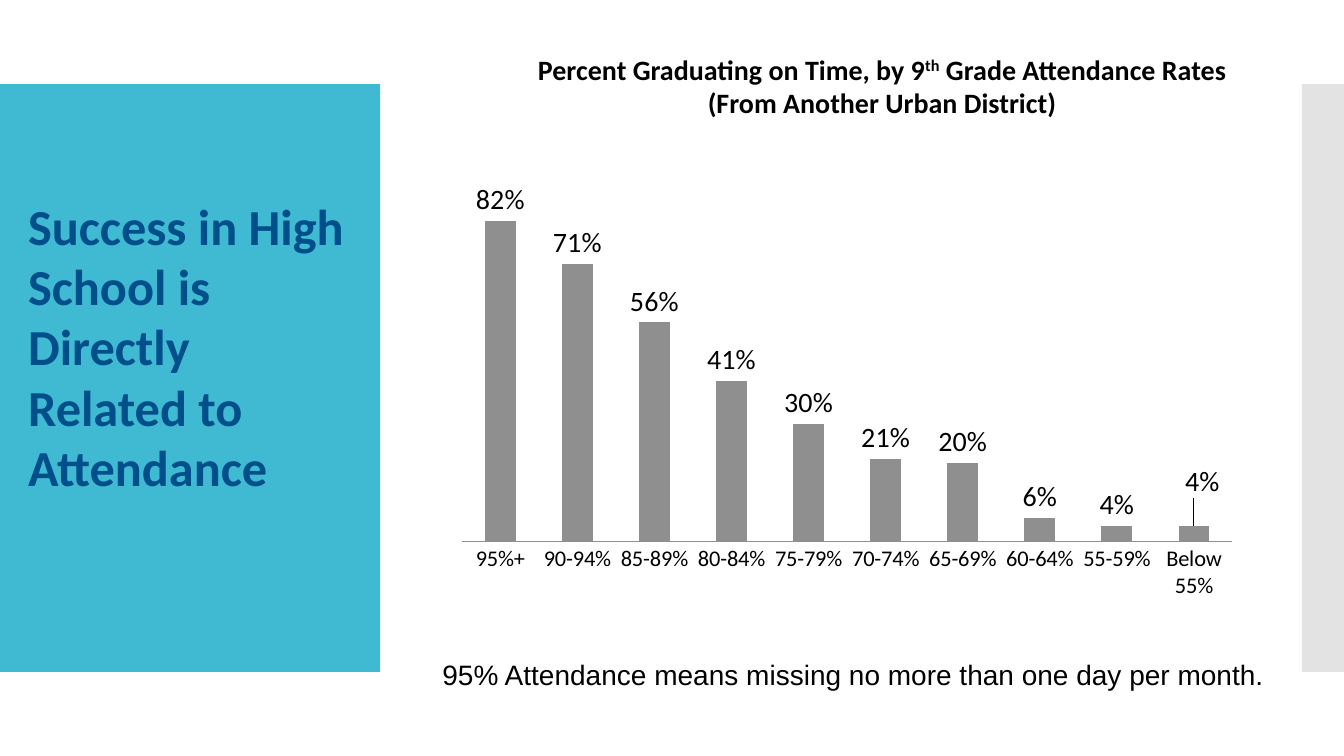
from dataclasses import dataclass

from lxml.etree import SubElement
from pptx import Presentation
from pptx.chart.data import CategoryChartData
from pptx.dml.color import RGBColor
from pptx.enum.chart import XL_CHART_TYPE, XL_LABEL_POSITION, XL_TICK_MARK
from pptx.enum.shapes import MSO_SHAPE
from pptx.enum.text import PP_ALIGN
from pptx.oxml import parse_xml
from pptx.oxml.ns import nsdecls, qn
from pptx.util import Cm, Pt


@dataclass(frozen=True)
class Theme:
    """Colours, fonts and type sizes of the slide."""
    panel: RGBColor = RGBColor(0x40, 0xBA, 0xD2)
    edge: RGBColor = RGBColor(0xC8, 0xC8, 0xC8)
    headline: RGBColor = RGBColor(0x00, 0x4F, 0x8A)
    ink: RGBColor = RGBColor(0, 0, 0)
    bars: RGBColor = RGBColor(0x8F, 0x8F, 0x8F)
    face: str = "Calibri"
    note_face: str = "Arial"
    headline_size: int = 36
    body_size: int = 20
    axis_size: int = 16


def manual_layout(x, y, **extras):
    """Return a chart layout element with the given fractions."""
    values = {**extras, "x": x, "y": y}
    order = ("layoutTarget", "xMode", "yMode", "x", "y", "w", "h")
    settings = "".join(f'<c:{key} val="{values[key]}"/>' for key in order if key in values)
    return parse_xml(f'<c:layout {nsdecls("c")}><c:manualLayout>{settings}</c:manualLayout></c:layout>')


class SlideBuilder:
    """Adds styled elements to the current slide."""

    def __init__(self, slide, theme):
        self.slide = slide
        self.theme = theme

    def style(self, font, size, color=None, face=None, bold=False):
        """Apply type settings to a font."""
        font.name = face or self.theme.face
        font.size = Pt(size)
        font.bold = bold
        font.color.rgb = color or self.theme.ink

    def band(self, left, width, color, opacity=100):
        """Add a side band at the common height."""
        band = self.slide.shapes.add_shape(
            MSO_SHAPE.RECTANGLE, Cm(left), Cm(2.12), Cm(width), Cm(14.81))
        band.shadow.inherit = False
        band.line.fill.background()
        band.fill.solid()
        band.fill.fore_color.rgb = color
        if opacity < 100:
            tint = band.fill._xPr.find(f".//{qn('a:srgbClr')}")
            SubElement(tint, qn("a:alpha"), val=str(opacity * 1000))

    def text(self, box, lines, size, align=PP_ALIGN.LEFT, **look):
        """Add paragraphs, each a list of (text, baseline) runs."""
        frame = self.slide.shapes.add_textbox(*map(Cm, box)).text_frame
        frame.word_wrap = True
        for index, line in enumerate(lines):
            paragraph = frame.add_paragraph() if index else frame.paragraphs[0]
            paragraph.alignment = align
            self.style(paragraph.font, size, **look)
            for wording, baseline in line:
                run = paragraph.add_run()
                run.text = wording
                self.style(run.font, size, **look)
                if baseline:
                    run.font._element.set("baseline", str(baseline * 1000))

    def column_chart(self, box, rates):
        """Add the labelled column chart."""
        graduation = CategoryChartData(number_format="0%")
        graduation.categories = list(rates)
        graduation.add_series("Series 1", list(rates.values()))
        chart = self.slide.shapes.add_chart(
            XL_CHART_TYPE.COLUMN_CLUSTERED, *map(Cm, box), graduation).chart
        chart.has_legend = chart.has_title = False
        self.style(chart.font, self.theme.axis_size)

        bands = chart.category_axis
        bands.major_tick_mark = XL_TICK_MARK.NONE
        bands.format.line.color.rgb = self.theme.bars
        self.style(bands.tick_labels.font, self.theme.axis_size)
        scale = chart.value_axis
        scale.minimum_scale, scale.maximum_scale = 0, 0.9
        scale.has_major_gridlines = False
        scale.visible = False

        plot = chart.plots[0]
        plot.vary_by_categories = False
        plot.gap_width, plot.overlap = 150, -25
        columns = plot.series[0]
        columns.format.fill.solid()
        columns.format.fill.fore_color.rgb = self.theme.bars
        labels = columns.data_labels
        labels.show_value = True
        labels.number_format, labels.number_format_is_linked = "0%", False
        labels.position = XL_LABEL_POSITION.OUTSIDE_END
        self.style(labels.font, self.theme.body_size)

        last_label = columns.points[len(rates) - 1].data_label
        last_label.text_frame.text = f"{list(rates.values())[-1]:.0%}"
        wording = last_label.text_frame.paragraphs[0]
        self.style(wording.font, self.theme.body_size)
        self.style(wording.runs[0].font, self.theme.body_size)
        last_label.position = XL_LABEL_POSITION.OUTSIDE_END
        label_element = columns._element.find(f".//{qn('c:dLbl')}")
        label_element.insert(1, manual_layout(0.01, -0.05))

        area = chart._chartSpace.find(f".//{qn('c:plotArea')}")
        for default in area.findall(qn("c:layout")):
            area.remove(default)
        area.insert(0, manual_layout(
            0.076, 0.048, w=0.918, h=0.762,
            layoutTarget="inner", xMode="edge", yMode="edge"))


def main():
    """Build and save the attendance slide."""
    deck = Presentation()
    deck.slide_width, deck.slide_height = Cm(33.87), Cm(19.05)
    theme = Theme()
    page = SlideBuilder(deck.slides.add_slide(deck.slide_layouts[6]), theme)

    page.band(0, 9.58, theme.panel)
    page.band(32.81, 1.06, theme.edge, opacity=50)
    page.column_chart((10.03, 4.22, 21.16, 11.63), {
        "95%+": 0.82, "90-94%": 0.71, "85-89%": 0.56, "80-84%": 0.41,
        "75-79%": 0.3, "70-74%": 0.21, "65-69%": 0.2, "60-64%": 0.06,
        "55-59%": 0.04, "Below 55%": 0.04,
    })
    page.text((10.9, 16.44, 22.9, 1.1),
              [[("95% Attendance means missing no more than one day per month.", 0)]],
              theme.body_size, face=theme.note_face)
    page.text((0.46, 4.78, 8.59, 7.95),
              [[("Success in High School is", 0)], [("Directly Related to Attendance", 0)]],
              theme.headline_size, color=theme.headline, bold=True)
    page.text((10.59, 1.19, 23.28, 1.96),
              [[("Percent Graduating on Time, by 9", 0), ("th", 30), (" Grade Attendance Rates", 0)],
               [("(From Another Urban District)", 0)]],
              theme.body_size, align=PP_ALIGN.CENTER, bold=True)
    deck.save("out.pptx")


if __name__ == "__main__":
    main()
